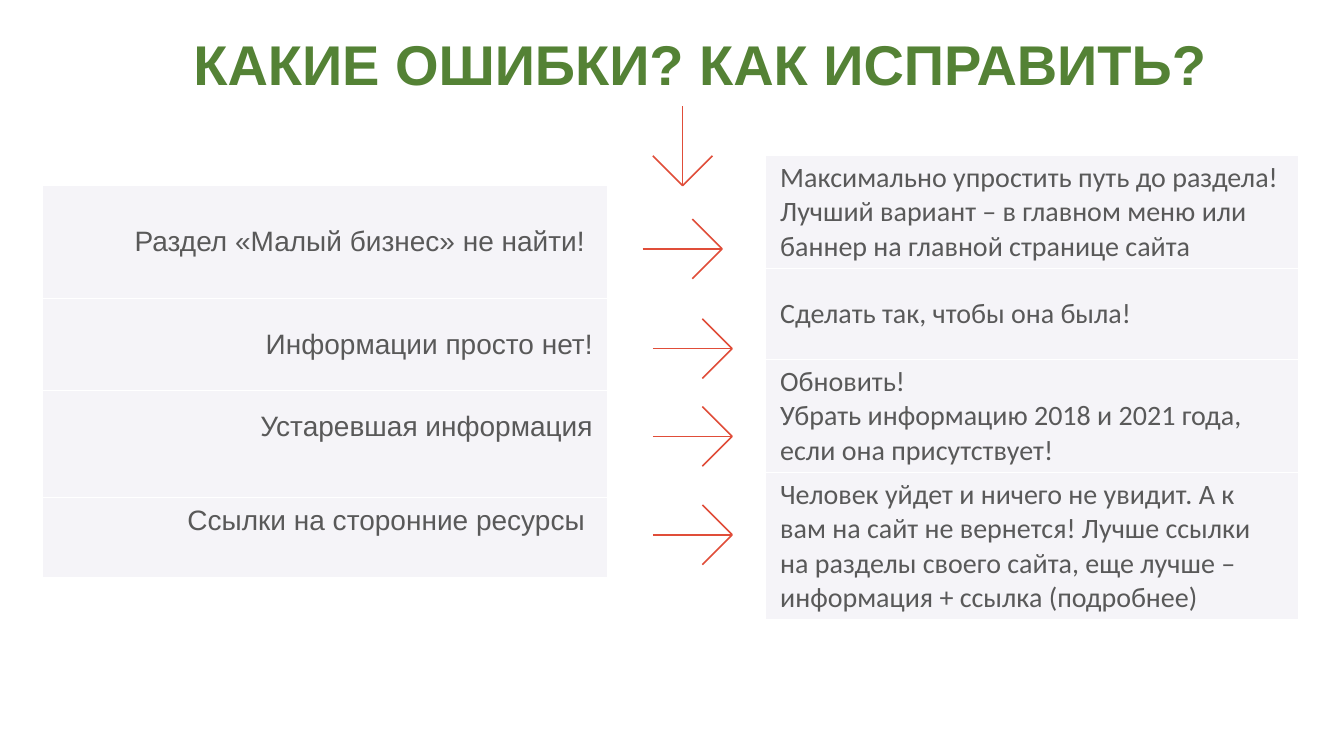
"""Build a slide that pairs website mistakes with the way to fix each one."""
from lxml import etree
from pptx import Presentation
from pptx.dml.color import RGBColor
from pptx.enum.shapes import MSO_CONNECTOR
from pptx.enum.text import MSO_ANCHOR, PP_ALIGN
from pptx.oxml.ns import qn
from pptx.util import Pt

LEFT, RIGHT = PP_ALIGN.LEFT, PP_ALIGN.RIGHT
TOP, MIDDLE = MSO_ANCHOR.TOP, MSO_ANCHOR.MIDDLE
STRAIGHT = MSO_CONNECTOR.STRAIGHT

COLORS = {"title": "548235", "text": "595959", "cell": "A19AC4",
          "border": "FFFFFF", "arrow": "E04D39"}
TITLE = "КАКИЕ ОШИБКИ? КАК ИСПРАВИТЬ?"
TITLE_BOX = (131, 17.3, 753.8, 74.9)
RAISED = 27.6
MISTAKES = {
    "place": (30.4, 132.7, 403.9), "font": "Arial", "align": RIGHT,
    "rows": [
        ("Раздел «Малый бизнес» не найти! ", 80.4, 3.6),
        ("Информации просто нет!", 65.7, 3.6),
        ("Устаревшая информация", 76.7, RAISED),
        ("Ссылки на сторонние ресурсы ", 56.9, RAISED),
    ],
}
FIXES = {
    "place": (546.5, 111.2, 380.8), "font": "Calibri", "align": LEFT,
    "rows": [
        ("Максимально упростить путь до раздела! Лучший вариант – в главном "
         "меню или баннер на главной странице сайта", 79.5, 3.6),
        ("Сделать так, чтобы она была!", 65, 3.6),
        ("Обновить! \nУбрать информацию 2018 и 2021 года, "
         "если она присутствует!", 75.6, 3.6),
        ("Человек уйдет и ничего не увидит. А к вам на сайт не вернется! "
         "Лучше ссылки на разделы своего сайта, еще лучше – "
         "информация + ссылка (подробнее)", 103, 3.6),
    ],
}
DOWN, ACROSS = (0, 1), (1, 0)
ARROWS = [(487.6, 132.6, DOWN), (515.8, 177.8, ACROSS), (523, 249, ACROSS),
          (523, 311.7, ACROSS), (523, 382, ACROSS)]
SHAFT, WING, ARROW_WIDTH = 56.7, 21.3, 1.14


def apply(target, values):
    for name, value in values.items():
        setattr(target, name, value)


def write(para, text, color, align, **font):
    para.text = text
    para.alignment = align
    for span in para.runs:
        apply(span.font, font)
        span.font.color.rgb = RGBColor.from_string(COLORS[color])


def add_title(page):
    title = page.shapes.title
    apply(title, dict(zip(("left", "top", "width", "height"),
                          map(Pt, TITLE_BOX))))
    apply(title.text_frame, {"vertical_anchor": TOP, "word_wrap": True})
    write(title.text_frame.paragraphs[0], TITLE, "title", LEFT,
          name="Arial", size=Pt(40), bold=True)


def style_cell(cell):
    cell.fill.solid()
    cell.fill.fore_color.rgb = RGBColor.from_string(COLORS["cell"])
    properties = cell._tc.get_or_add_tcPr()
    tint = properties.find(".//" + qn("a:srgbClr"))
    etree.SubElement(tint, qn("a:alpha"), val="10000")
    for position, side in enumerate(("lnT", "lnB")):
        border = etree.Element(qn("a:" + side), w=str(Pt(0.96)))
        paint = etree.SubElement(border, qn("a:solidFill"))
        etree.SubElement(paint, qn("a:srgbClr"), val=COLORS["border"])
        properties.insert(position, border)


def add_column(page, column):
    left, top, width = column["place"]
    rows = column["rows"]
    height = sum(row[1] for row in rows)
    table = page.shapes.add_table(len(rows), 1, Pt(left), Pt(top),
                                  Pt(width), Pt(height)).table
    apply(table, {"first_row": False, "horz_banding": False})
    for index, (text, row_height, bottom) in enumerate(rows):
        table.rows[index].height = Pt(row_height)
        cell = table.cell(index, 0)
        apply(cell, {"margin_left": Pt(10.8), "margin_right": Pt(10.8),
                     "margin_top": Pt(3.6), "margin_bottom": Pt(bottom),
                     "vertical_anchor": MIDDLE})
        style_cell(cell)
        write(cell.text_frame.paragraphs[0], text, "text", column["align"],
              name=column["font"], size=Pt(20))


def add_arrow(page, x, y, direction):
    dx, dy = direction
    back_x, back_y = x - WING * dx, y - WING * dy
    wings = [(back_x + side * WING * dy, back_y + side * WING * dx)
             for side in (-1, 1)]
    start, tip, end = [(Pt(a), Pt(b)) for a, b in (wings[0], (x, y), wings[1])]
    builder = page.shapes.build_freeform(*start)
    builder.add_line_segments([tip, end], close=False)
    head = builder.convert_to_shape()
    head.fill.background()
    head.shadow.inherit = False
    shaft = page.shapes.add_connector(
        STRAIGHT, Pt(x - SHAFT * dx), Pt(y - SHAFT * dy), *tip)
    for part in (head, shaft):
        part.line.color.rgb = RGBColor.from_string(COLORS["arrow"])
        part.line.width = Pt(ARROW_WIDTH)
    etree.SubElement(shaft._element.spPr, qn("a:effectLst"))


def main():
    deck = Presentation()
    apply(deck, {"slide_width": Pt(960), "slide_height": Pt(540)})
    page = deck.slides.add_slide(deck.slide_layouts[5])
    add_title(page)
    add_column(page, MISTAKES)
    for arrow in ARROWS:
        add_arrow(page, *arrow)
    add_column(page, FIXES)
    deck.save("out.pptx")


if __name__ == "__main__":
    main()
